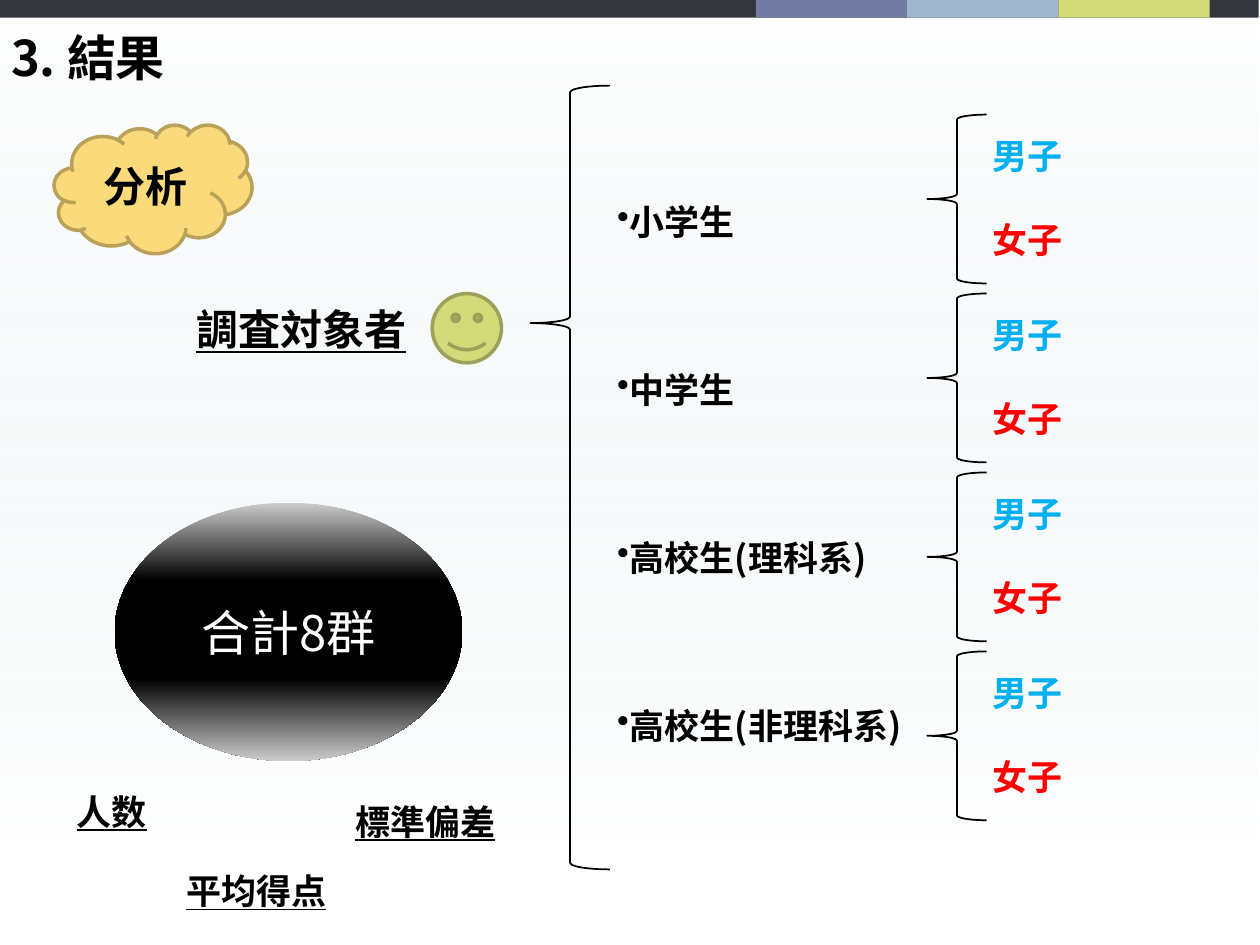
from lxml.etree import SubElement
from pptx import Presentation
from pptx.dml.color import RGBColor
from pptx.enum.shapes import MSO_SHAPE
from pptx.enum.text import MSO_ANCHOR, PP_ALIGN
from pptx.oxml.ns import qn
from pptx.util import Inches, Pt

FONT = "Noto Sans CJK JP"
LINE_HEIGHT = 1.2
BLACK = RGBColor(0x00, 0x00, 0x00)
WHITE = RGBColor(0xFF, 0xFF, 0xFF)
SILVER = RGBColor(0xCC, 0xCC, 0xCC)
MIST = RGBColor(0xDD, 0xE9, 0xEC)
CHARCOAL = RGBColor(0x35, 0x35, 0x3E)
INDIGO = RGBColor(0x72, 0x7C, 0xA3)
SKY = RGBColor(0x9F, 0xB8, 0xCD)
LIME = RGBColor(0xD2, 0xDA, 0x7A)
DARK_LIME = RGBColor(0x9B, 0xA1, 0x5A)
GOLD = RGBColor(0xFA, 0xDA, 0x7A)
DARK_GOLD = RGBColor(0xB9, 0xA1, 0x5A)
BOY_BLUE = RGBColor(0x00, 0xB0, 0xF0)
GIRL_RED = RGBColor(0xFF, 0x00, 0x00)


def add_shape(slide, kind, box, fill=None, line=None, line_width=1):
    shape = slide.shapes.add_shape(kind, *map(Inches, box))
    shape.shadow.inherit = False
    if fill is None:
        shape.fill.background()
    else:
        shape.fill.solid()
        shape.fill.fore_color.rgb = fill
    if line is None:
        shape.line.fill.background()
    else:
        shape.line.color.rgb = line
        shape.line.width = Pt(line_width)
    return shape


def set_gradient(shape, stops, angle):
    properties = shape.fill._xPr
    old_fill = properties.find(qn("a:solidFill"))
    gradient = properties.makeelement(qn("a:gradFill"), {"rotWithShape": "1"})
    properties.replace(old_fill, gradient)
    stop_list = SubElement(gradient, qn("a:gsLst"))
    for position, color, opacity in stops:
        stop = SubElement(stop_list, qn("a:gs"), pos=str(position * 1000))
        color_element = SubElement(stop, qn("a:srgbClr"), val=str(color))
        if opacity < 100:
            SubElement(color_element, qn("a:alpha"), val=str(opacity * 1000))
    SubElement(gradient, qn("a:lin"), ang=str(angle * 60000), scaled="0")


def add_run(paragraph, text, size, color=BLACK, bold=True, underline=None):
    paragraph.line_spacing = Pt(size * LINE_HEIGHT)
    run = paragraph.add_run()
    run.text = text
    font = run.font
    font.name = FONT
    font.size = Pt(size)
    font.color.rgb = color
    font.bold = bold
    font.underline = underline
    SubElement(run._r.get_or_add_rPr(), qn("a:ea"), typeface=FONT)


def add_text_box(slide, box, wrap=False):
    frame = slide.shapes.add_textbox(*map(Inches, box)).text_frame
    frame.word_wrap = wrap
    frame.margin_top = Inches(0.08)
    return frame


def add_label(slide, box, text, size, underline=None):
    frame = add_text_box(slide, box)
    add_run(frame.paragraphs[0], text, size, underline=underline)


def add_centered_text(shape, text, size, color, bold):
    frame = shape.text_frame
    frame.vertical_anchor = MSO_ANCHOR.MIDDLE
    paragraph = frame.paragraphs[0]
    paragraph.alignment = PP_ALIGN.CENTER
    add_run(paragraph, text, size, color, bold)


def add_spaced_lines(frame, lines, size, gap, bullet=False):
    for index, (text, color) in enumerate(lines):
        paragraph = frame.add_paragraph() if index else frame.paragraphs[0]
        add_run(paragraph, text, size, color)
        if index:
            paragraph.space_before = Pt(gap)
        if bullet:
            properties = paragraph._p.get_or_add_pPr()
            properties.set("marL", "0")
            properties.set("indent", "0")
            SubElement(properties, qn("a:buChar"), char="•")


def add_brace(slide, box, adjustments=()):
    brace = add_shape(slide, MSO_SHAPE.LEFT_BRACE, box, line=BLACK)
    for index, value in enumerate(adjustments):
        brace.adjustments[index] = value


def add_backdrop(slide):
    backdrop = add_shape(slide, MSO_SHAPE.RECTANGLE, (-0.01, 0, 10, 6.88), WHITE)
    set_gradient(backdrop, [(1, MIST, 0), (100, WHITE, 92)], 270)
    add_shape(slide, MSO_SHAPE.RECTANGLE, (-0.01, -0.02, 10, 0.16), CHARCOAL)
    for index, color in enumerate((INDIGO, SKY, LIME)):
        box = (6 + 1.2 * index, -0.02, 1.2, 0.16)
        add_shape(slide, MSO_SHAPE.RECTANGLE, box, color)


def add_subjects(slide):
    cloud = add_shape(slide, MSO_SHAPE.CLOUD, (0.43, 0.99, 1.57, 1.02),
                      GOLD, DARK_GOLD, 2)
    add_centered_text(cloud, "分析", 24, BLACK, True)
    add_label(slide, (1.46, 2.33, 1.89, 0.5), "調査対象者", 24, True)
    add_shape(slide, MSO_SHAPE.SMILEY_FACE, (3.43, 2.33, 0.55, 0.55),
              LIME, DARK_LIME, 2)


def add_groups(slide):
    schools = ("小学生", "中学生", "高校生(理科系)", "高校生(非理科系)")
    add_brace(slide, (4.21, 0.68, 0.63, 6.22), (0.083, 0.303))
    frame = add_text_box(slide, (4.8, 1.51, 2.56, 4.48), wrap=True)
    add_spaced_lines(frame, [(school, BLACK) for school in schools], 20, 72, True)
    for index in range(len(schools)):
        offset = 1.42 * index
        add_brace(slide, (7.36, 0.91 + offset, 0.47, 1.34))
        frame = add_text_box(slide, (7.78, 0.99 + offset, 0.77, 1.11))
        add_spaced_lines(frame, [("男子", BOY_BLUE), ("女子", GIRL_RED)], 20, 24)


def add_summary(slide):
    total = add_shape(slide, MSO_SHAPE.OVAL, (0.91, 3.99, 2.76, 2.05), BLACK)
    set_gradient(total, [(0, SILVER, 100), (30, BLACK, 100),
                         (68, BLACK, 100), (100, SILVER, 100)], 90)
    add_centered_text(total, "合計8群", 28, WHITE, False)
    for text, left, top, width in (("人数", 0.51, 6.19, 0.77),
                                   ("平均得点", 1.38, 6.82, 1.33),
                                   ("標準偏差", 2.72, 6.27, 1.33)):
        add_label(slide, (left, top, width, 0.44), text, 20, True)


def main():
    presentation = Presentation()
    presentation.slide_width = Inches(10)
    presentation.slide_height = Inches(7.5)
    slide = presentation.slides.add_slide(presentation.slide_layouts[6])
    add_backdrop(slide)
    add_label(slide, (-0.01, 0.14, 1.59, 0.57), "3. 結果", 28)
    add_subjects(slide)
    add_groups(slide)
    add_summary(slide)
    presentation.save("out.pptx")


if __name__ == "__main__":
    main()
